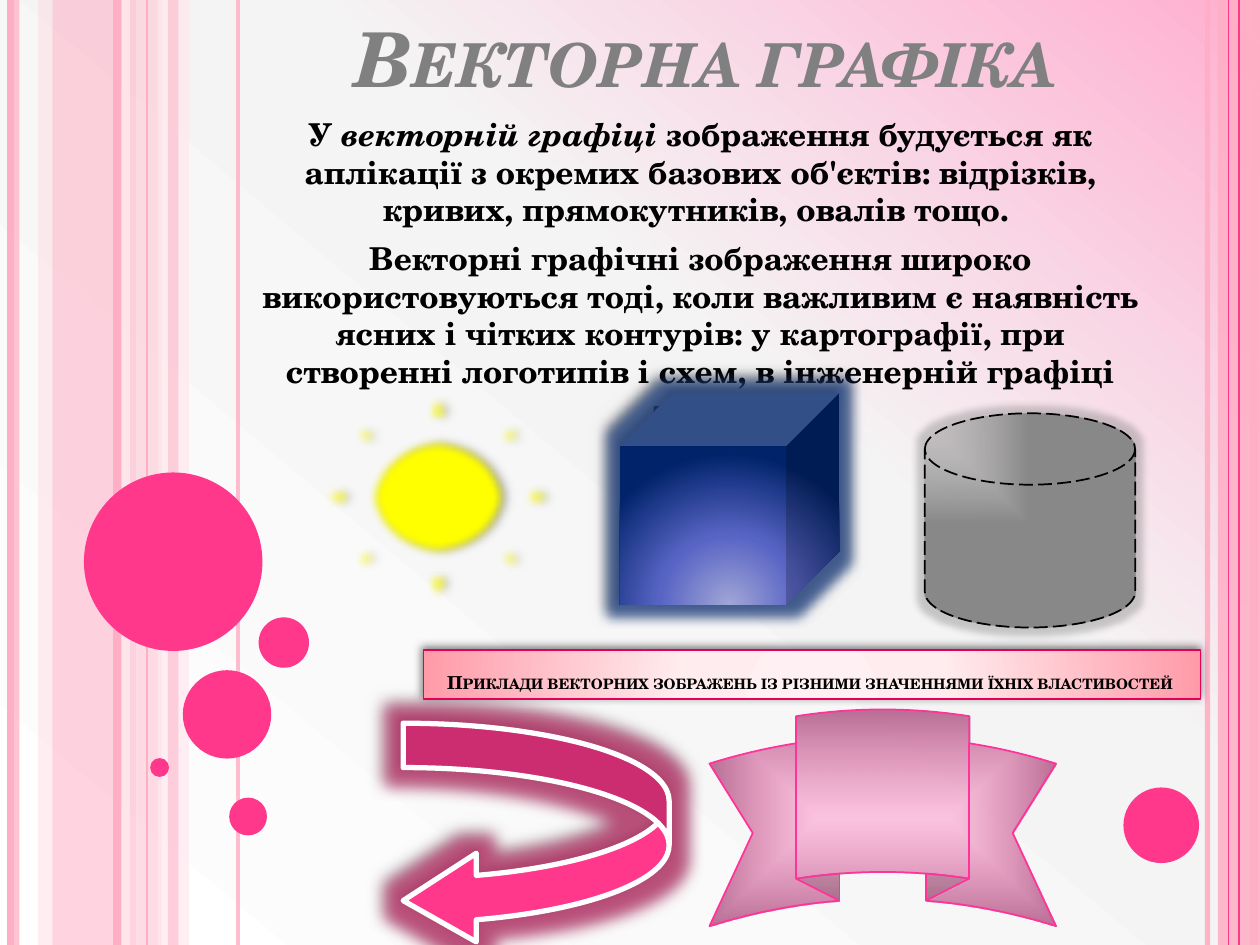
"""Build a slide on vector graphics with a striped frame and sample drawings."""
from dataclasses import dataclass

from pptx import Presentation
from pptx import util as u
from pptx.dml.color import RGBColor
from pptx.enum import dml, shapes, text
from pptx.oxml import ns, parse_xml

KIND = shapes.MSO_SHAPE


@dataclass(frozen=True)
class Theme:
    font: str = "TeX Gyre Schola"
    pink: str = "FF388C"
    rose: str = "FFAFC5"
    blush: str = "FFCEDA"
    pale: str = "FFE8EE"
    black: str = "000000"
    gray: str = "808080"
    white: str = "FFFFFF"
    yellow: str = "FFFF00"
    title_size: float = 43.2
    body_size: float = 18
    banner_size: float = 10.2


THEME = Theme()
HEIGHT = 540
BACKDROP = [(0, "FFAFD1", {"alpha": 83}), (40, "F4F4F4", {}), (100, THEME.white, {})]
RIBBON = [(0, "FF99CC", {"alpha": 54}), (100, "FF99CC", {"shade": 47.84})]
DISK = [(0, "C0C0C0", {"alpha": 22}), (100, "C0C0C0", {"shade": 46.27})]
CUBE = [(0, "A1A6D6", {}), (46, "5864C4", {}), (100, "00236A", {})]
BANNER = [(0, "FFF1F3", {}), (34, "FFECEE", {}), (100, "FF9BA9", {})]
BELOW = (50, 155, 50, -55)

STRIPES = [
    (690, THEME.rose, 3, 93), (6, THEME.rose, 4.5, 100),
    (708, THEME.pink, 1.5, 100), (702, THEME.pink, 0.75, 100),
    (8.8, THEME.rose, 4.5, 73), (72, THEME.pale, 4.5, 83),
    (67, THEME.rose, 4.5, 100), (136, THEME.rose, 2.25, 82),
    (84, THEME.rose, 0.75, 100), (716.5, THEME.rose, 4.5, 100),
]
BANDS = [
    (696, 24, THEME.rose, 87), (30, 48, THEME.rose, 54), (21.8, 8.2, THEME.blush, 36),
    (78, 14.4, THEME.blush, 70), (90, 18, THEME.pale, 71), (96, 6, THEME.rose, 51),
]
BUBBLES = [
    (642, 450, 43.2), (48, 270, 102), (104.5, 383, 50.5),
    (85.8, 433.2, 10.8), (131, 455.8, 21.6), (147.8, 352.8, 28.8),
]
PARAGRAPHS = [
    [("У ", False), ("векторній графіці ", True),
     ("зображення будується як аплікації з окремих базових об'єктів: відрізків, "
      "кривих, прямокутників, овалів тощо. ", False)],
    [("Векторні графічні зображення широко використовуються тоді, коли важливим є "
      "наявність ясних і чітких контурів: у картографії, при створенні логотипів і "
      "схем, в інженерній графіці тощо.", False)],
]


def apply(target, values):
    """Set every attribute named in a dict of format values."""
    for name, value in values.items():
        setattr(target, name, value)


def element(markup):
    """Parse one DrawingML element."""
    head, mark, tail = markup.partition(">")
    slash = "/" if head.endswith("/") else ""
    return parse_xml(f"{head.rstrip('/')} {ns.nsdecls('a')}{slash}{mark}{tail}")


def color_markup(color, changes):
    """Return a colour with percentage changes such as alpha or shade."""
    inner = "".join(f'<a:{k} val="{round(v * 1000)}"/>' for k, v in changes.items())
    return f'<a:srgbClr val="{color}">{inner}</a:srgbClr>'


def fade(part, alpha):
    """Make the colours inside an element partly transparent."""
    if alpha < 100:
        for color in part.iter(ns.qn("a:srgbClr")):
            color.append(element(f'<a:alpha val="{alpha * 1000}"/>'))


def paint_gradient(owner, root, stops, direction):
    """Fill an owner with a gradient whose direction is given as markup."""
    owner.fill.solid()
    solid = next(root.iter(ns.qn("a:solidFill")))
    marks = "".join(f'<a:gs pos="{pos * 1000}">{color_markup(color, changes)}</a:gs>'
                    for pos, color, changes in stops)
    solid.getparent().replace(solid, element(
        f'<a:gradFill rotWithShape="1"><a:gsLst>{marks}</a:gsLst>{direction}</a:gradFill>'))


def radial(kind, focus):
    """Return the direction markup of a gradient that grows from a focus."""
    sides = " ".join(f'{side}="{value * 1000}"' for side, value in zip("ltrb", focus))
    return f'<a:path path="{kind}"><a:fillToRect {sides}/></a:path>'


def add_stripe(slide, x, color, width, alpha):
    """Draw one vertical line over the full height."""
    stripe = slide.shapes.add_connector(
        shapes.MSO_CONNECTOR.STRAIGHT, u.Pt(x), 0, u.Pt(x), u.Pt(HEIGHT))
    stripe.line.width = u.Pt(width)
    stripe.line.color.rgb = RGBColor.from_string(color)
    properties = stripe._element.spPr
    fade(properties, alpha)
    properties.append(element("<a:effectLst/>"))


def add_figure(slide, kind, box, fill=None, alpha=100, line=None):
    """Draw one preset shape with a plain fill and an optional outline."""
    figure = slide.shapes.add_shape(kind, *map(u.Pt, box))
    figure.shadow.inherit = False
    if fill:
        figure.fill.solid()
        figure.fill.fore_color.rgb = RGBColor.from_string(fill)
        fade(figure._element.spPr, alpha)
    if line:
        color, width, dash = line
        apply(figure.line, {"width": u.Pt(width), "dash_style": dash})
        figure.line.color.rgb = RGBColor.from_string(color)
    else:
        figure.line.fill.background()
    return figure


def add_effects(figure, glow=None, shadow=None, soft=None):
    """Add glow, outer shadow and soft edge to a figure."""
    effects = figure._element.spPr.find(ns.qn("a:effectLst"))
    if glow:
        color, alpha, radius = glow
        effects.append(element(f'<a:glow rad="{u.Pt(radius)}">'
                               f'{color_markup(color, {"alpha": alpha})}</a:glow>'))
    if shadow:
        alpha, blur, distance, angle = shadow
        effects.append(element(
            f'<a:outerShdw blurRad="{u.Pt(blur)}" dist="{u.Pt(distance)}" '
            f'dir="{angle * 60000}" rotWithShape="0">'
            f'{color_markup(THEME.black, {"alpha": alpha})}</a:outerShdw>'))
    if soft:
        effects.append(element(f'<a:softEdge rad="{u.Pt(soft)}"/>'))


def add_words(paragraph, words, size, color, italic=False, small_caps=False):
    """Add one bold run to a centred paragraph."""
    paragraph.alignment = text.PP_ALIGN.CENTER
    run = paragraph.add_run()
    run.text = words
    apply(run.font, {"name": THEME.font, "size": u.Pt(size), "bold": True, "italic": italic})
    run.font.color.rgb = RGBColor.from_string(color)
    if small_caps:
        run._r.get_or_add_rPr().set("cap", "small")


def place(holder, box, anchor):
    """Move a placeholder and fix how its text sits."""
    apply(holder, dict(zip(("left", "top", "width", "height"), map(u.Pt, box))))
    apply(holder.text_frame, {"vertical_anchor": anchor, "word_wrap": True,
                              "auto_size": text.MSO_AUTO_SIZE.NONE})
    return holder.text_frame


def write_text(slide):
    """Fill the title and the body."""
    title = place(slide.shapes.title, (163.4, 0, 480.2, 62), text.MSO_ANCHOR.BOTTOM)
    add_words(title.paragraphs[0], "Векторна графіка", THEME.title_size, THEME.gray, True, True)
    body = place(slide.placeholders[1], (134.6, 62, 531.4, 152), text.MSO_ANCHOR.TOP)
    for index, pieces in enumerate(PARAGRAPHS):
        paragraph = body.add_paragraph() if index else body.paragraphs[0]
        paragraph.space_before = u.Pt(6)
        properties = paragraph._p.get_or_add_pPr()
        properties.set("marL", "0")
        properties.set("indent", "0")
        properties.append(element("<a:buNone/>"))
        for words, italic in pieces:
            add_words(paragraph, words, THEME.body_size, THEME.black, italic)


def draw_frame(slide):
    """Draw the background, bands, stripes and bubbles."""
    paint_gradient(slide.background, slide._element, BACKDROP,
                   f'<a:lin ang="{130 * 60000}" scaled="0"/>')
    for x, width, color, alpha in BANDS:
        add_figure(slide, KIND.RECTANGLE, (x, 0, width, HEIGHT), color, alpha)
    for stripe in STRIPES:
        add_stripe(slide, *stripe)
    for x, y, size in BUBBLES:
        add_figure(slide, KIND.OVAL, (x, y, size, size), THEME.pink)


def draw_samples(slide):
    """Draw the five sample figures and their caption banner."""
    ribbon = add_figure(slide, KIND.CURVED_UP_RIBBON, (405.4, 405.4, 198, 123.8),
                        line=("FF3399", 1, None))
    paint_gradient(ribbon, ribbon._element, RIBBON, radial("rect", (50, 50, 50, 50)))
    sun = add_figure(slide, KIND.SUN, (168.5, 213.8, 163.4, 140.4), THEME.yellow,
                     line=("800080", 1.5, dml.MSO_LINE.ROUND_DOT))
    add_effects(sun, shadow=(40, 4, 3, 0), soft=5)
    arrow = add_figure(slide, KIND.CURVED_LEFT_ARROW, (230.4, 413.3, 152, 126.7), THEME.pink,
                       line=(THEME.white, 3, None))
    for index, ratio in enumerate((0.2, 0.4, 0.33)):
        arrow.adjustments[index] = ratio
    add_effects(arrow, glow=("C0205F", 65, 18), shadow=(50, 5, 2, 245))
    disk = add_figure(slide, KIND.FLOWCHART_MAGNETIC_DISK, (528.5, 236.2, 120.2, 122.4),
                      line=(THEME.black, 1, dml.MSO_LINE.LONG_DASH))
    paint_gradient(disk, disk._element, DISK, radial("rect", (0, 0, 100, 100)))
    add_effects(disk, glow=(THEME.gray, 40, 8))
    cube = add_figure(slide, KIND.CUBE, (354.2, 224.6, 125.3, 121))
    paint_gradient(cube, cube._element, CUBE, radial("circle", BELOW))
    add_effects(cube, glow=("1F4489", 70, 14), shadow=(60, 4, 3, 245))
    banner = add_figure(slide, KIND.RECTANGLE, (242, 371.5, 444.2, 28), line=("E40059", 0.75, None))
    paint_gradient(banner, banner._element, BANNER, radial("circle", BELOW))
    add_effects(banner, shadow=(50, 5, 2, 245))
    apply(banner.text_frame, {"vertical_anchor": text.MSO_ANCHOR.BOTTOM, "word_wrap": True})
    add_words(banner.text_frame.paragraphs[0],
              "Приклади векторних зображень із різними значеннями їхніх властивостей ",
              THEME.banner_size, THEME.black, small_caps=True)


def main():
    """Build and save the slide."""
    deck = Presentation()
    apply(deck, {"slide_width": u.Pt(720), "slide_height": u.Pt(HEIGHT)})
    slide = deck.slides.add_slide(deck.slide_layouts[1])
    write_text(slide)
    draw_frame(slide)
    draw_samples(slide)
    deck.save("out.pptx")


if __name__ == "__main__":
    main()
